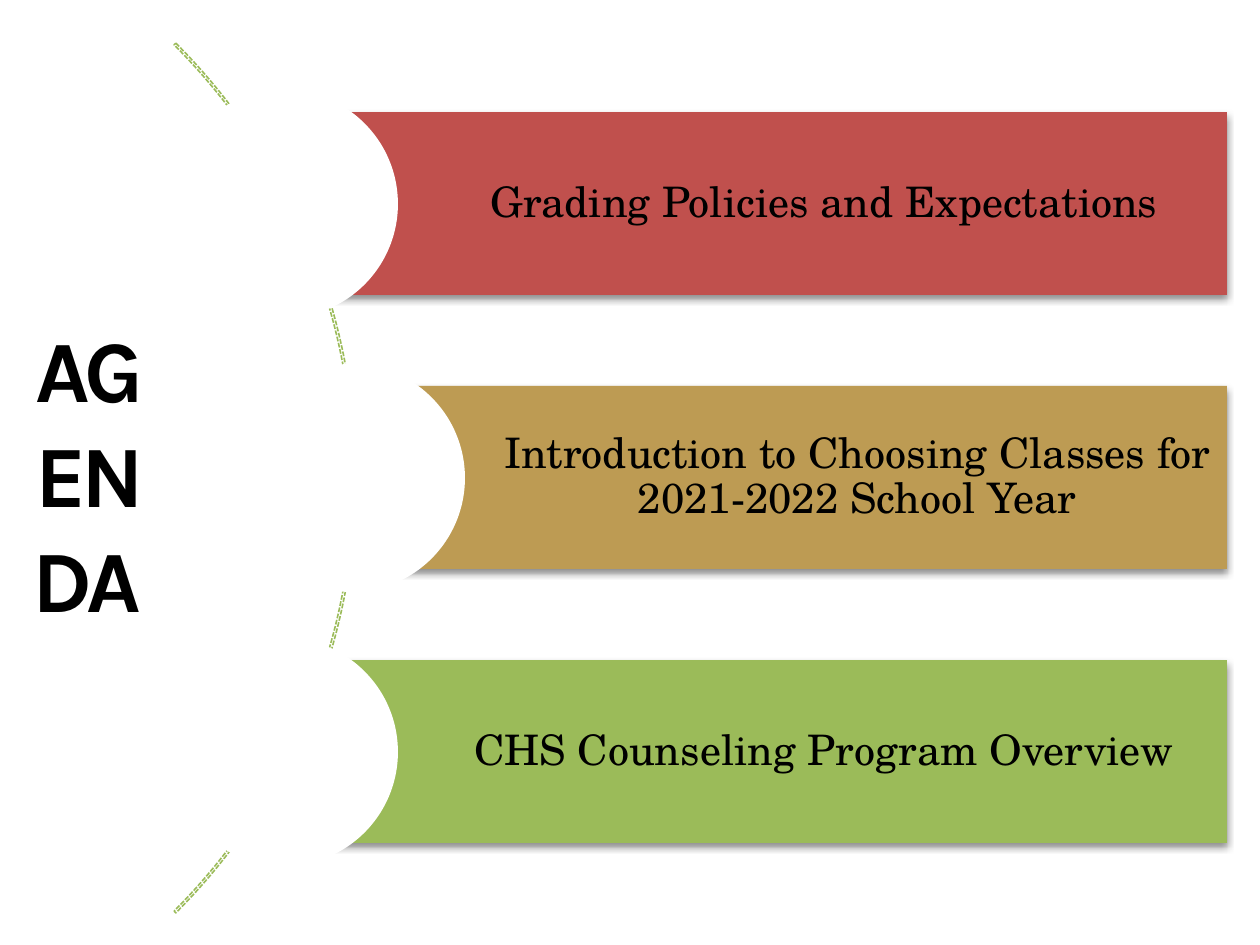
"""Build the agenda slide: a stacked title, an arc and three coloured topic bars."""
import pptx
import pptx.dml.color
import pptx.enum.dml
import pptx.enum.shapes
import pptx.enum.text
import pptx.oxml
import pptx.util
from dataclasses import dataclass

Pt = pptx.util.Pt
MSO_SHAPE = pptx.enum.shapes.MSO_SHAPE
SCALE = 914400 / 126


@dataclass(frozen=True)
class Theme:
    ink: str = "000000"
    paper: str = "FFFFFF"
    red: str = "C0504D"
    tan: str = "BD9B53"
    green: str = "9BBB59"
    title_font: str = "Karla"
    body_font: str = "TeX Gyre Schola"
    title_size: int = 50
    body_size: int = 24


theme = Theme()


def px(*lengths):
    return [round(n * SCALE) for n in lengths]


def write(tf, text, *, font, size, bold=False, spacing=1.0, after=0, insets=(13, 6, 13, 6)):
    tf.word_wrap = True
    tf.auto_size = pptx.enum.text.MSO_AUTO_SIZE.NONE
    tf.vertical_anchor = pptx.enum.text.MSO_ANCHOR.MIDDLE
    tf.margin_left, tf.margin_top, tf.margin_right, tf.margin_bottom = px(*insets)
    p = tf.paragraphs[0]
    p.alignment = pptx.enum.text.PP_ALIGN.CENTER
    p.line_spacing = spacing
    p.space_after = Pt(after)
    r = p.add_run()
    r.text = text
    r.font.name, r.font.size, r.font.bold = font, Pt(size), bold
    r.font.color.rgb = pptx.dml.color.RGBColor.from_string(theme.ink)
    return r


prs = pptx.Presentation()
prs.slide_width, prs.slide_height = px(1260, 945)
s = prs.slides.add_slide(prs.slide_layouts[5])

title = s.shapes.title
title.left, title.top, title.width, title.height = px(3, 42, 168, 861)
r = write(title.text_frame, "AGENDA", font=theme.title_font, size=theme.title_size,
          bold=True, after=36)
r.font._element.set("spc", "-300")
title.text_frame._txBody.bodyPr.set("vert", "wordArtVert")

arc = s.shapes.add_shape(MSO_SHAPE.BLOCK_ARC, *px(-874, -137, 1230, 1230))
arc.adjustments[0], arc.adjustments[1], arc.adjustments[2] = 189, 27, 0.002
arc.shadow.inherit = False
arc.fill.background()
arc.line.color.rgb = pptx.dml.color.RGBColor.from_string(theme.green)
arc.line.width = Pt(0.9)
arc.line.dash_style = pptx.enum.dml.MSO_LINE.SQUARE_DOT

SHADOW = (
    '<a:outerShdw xmlns:a="http://schemas.openxmlformats.org/drawingml/2006/main"'
    ' blurRad="50800" dist="25400" dir="5400000" rotWithShape="0">'
    f'<a:srgbClr val="{theme.ink}"><a:alpha val="45000"/></a:srgbClr></a:outerShdw>'
)
BAR_RIGHT, BAR_TOP, BAR_HEIGHT, BAR_PITCH = 1227, 112, 183, 274
CIRCLE = 228

topics = [
    ("Grading Policies and Expectations", theme.red, 285, 170),
    ("Introduction to Choosing Classes for 2021-2022 School Year", theme.tan, 351, 237),
    ("CHS Counseling Program Overview", theme.green, 285, 170),
]
for i, (text, color, bar_left, circle_left) in enumerate(topics):
    top = BAR_TOP + i * BAR_PITCH
    circle_top = top - (CIRCLE - BAR_HEIGHT) // 2
    bar = s.shapes.add_shape(
        MSO_SHAPE.RECTANGLE, *px(bar_left, top, BAR_RIGHT - bar_left, BAR_HEIGHT))
    circle = s.shapes.add_shape(
        MSO_SHAPE.OVAL, *px(circle_left, circle_top, CIRCLE, CIRCLE))
    for sp, fill in ((bar, color), (circle, theme.paper)):
        sp.shadow.inherit = False
        sp.fill.solid()
        sp.fill.fore_color.rgb = pptx.dml.color.RGBColor.from_string(fill)
        sp.line.fill.background()
    effects = bar._element.spPr.find(pptx.oxml.ns.qn("a:effectLst"))
    effects.append(pptx.oxml.parse_xml(SHADOW))
    write(bar.text_frame, text, font=theme.body_font, size=theme.body_size,
          spacing=0.9, insets=(145, 9, 9, 9))

prs.save("out.pptx")
